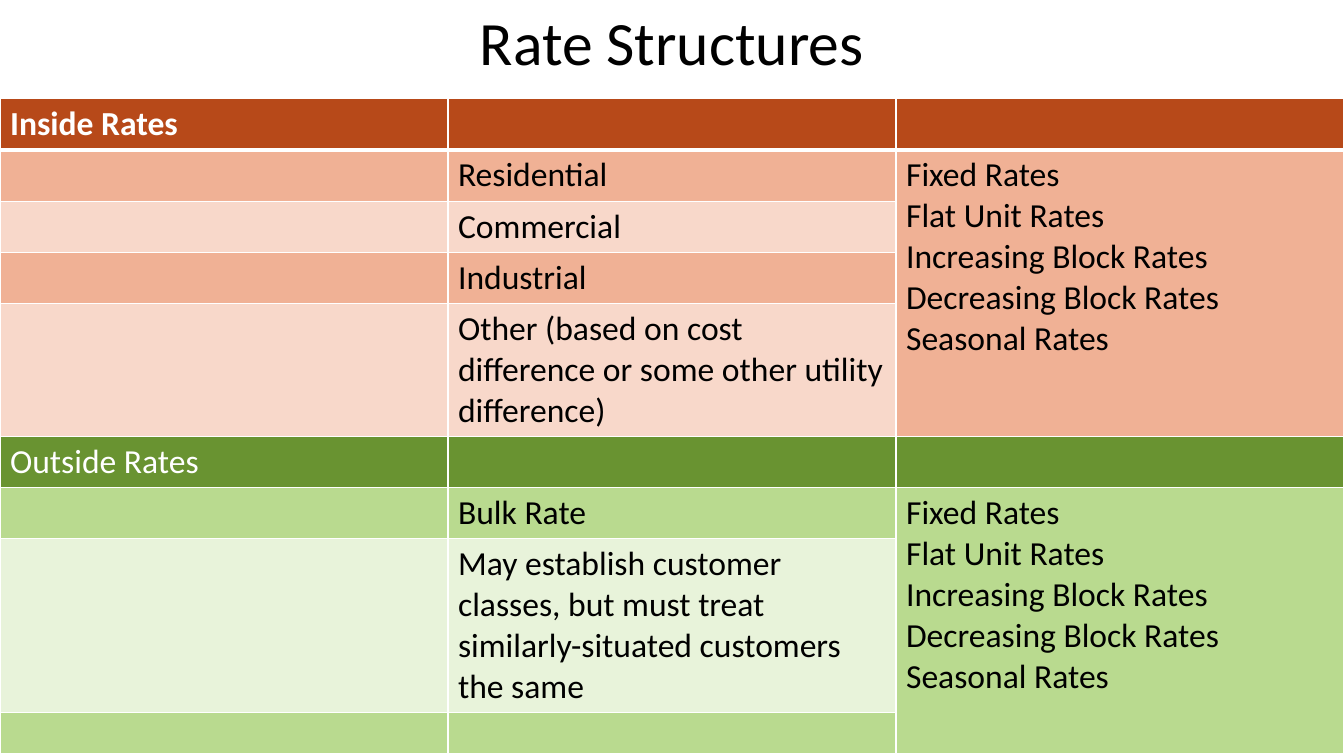
from lxml import etree
from pptx import Presentation
from pptx.dml.color import RGBColor
from pptx.enum import text
from pptx.oxml import ns
from pptx.util import Cm, Pt

RATES = "\n".join(["Fixed Rates", "Flat Unit Rates", "Increasing Block Rates",
                   "Decreasing Block Rates", "Seasonal Rates"])
LINE_H, CELL_PAD, EMPTY_H = 1.03, 0.26, 1.04

# heading, dark fill, middle fill, light fill, (customer class, lines it takes)
SECTIONS = [
    ("Inside Rates", "B74919", "F0B195", "F8D8CA",
     [("Residential", 1), ("Commercial", 1), ("Industrial", 1),
      ("Other (based on cost difference or some other utility difference)", 3)]),
    ("Outside Rates", "699331", "B9DA8F", "E8F3DA",
     [("Bulk Rate", 1),
      ("May establish customer classes, but must treat "
       "similarly-situated customers the same", 4),
      ("", 0)]),
]


def rgb(color):
    return RGBColor.from_string(color)


def format_runs(tf, size, color, bold=False):
    for p in tf.paragraphs:
        for r in p.runs:
            r.font.name = "Calibri"
            r.font.size = Pt(size)
            r.font.bold = bold
            r.font.color.rgb = rgb(color)


def set_borders(cell, top, bottom):
    """Draw white borders, 1 pt at the sides."""
    widths = {"lnL": 1, "lnR": 1, "lnT": top, "lnB": bottom}
    tc_pr = cell._tc.get_or_add_tcPr()
    for i, (tag, width) in enumerate(widths.items()):
        ln = etree.Element(ns.qn("a:" + tag), w=str(Pt(width)))
        fill = etree.SubElement(ln, ns.qn("a:solidFill"))
        etree.SubElement(fill, ns.qn("a:srgbClr"), val="FFFFFF")
        tc_pr.insert(i, ln)


def fill_cell(cell, words, fill, color, bold=False):
    cell.fill.solid()
    cell.fill.fore_color.rgb = rgb(fill)
    if words:
        cell.text_frame.text = words
        format_runs(cell.text_frame, 24, color, bold)


def add_title(slide, words, left, top, width, height):
    tf = slide.shapes.add_textbox(left, top, width, height).text_frame
    tf.word_wrap = True
    tf.vertical_anchor = text.MSO_ANCHOR.MIDDLE
    tf.text = words
    tf.paragraphs[0].alignment = text.PP_ALIGN.CENTER
    tf.paragraphs[0].line_spacing = 0.9
    format_runs(tf, 44, "000000")


def add_section(table, first, section):
    """Fill one heading row and its class rows; return the next free row."""
    heading, dark, middle, light, classes = section
    for col, words in enumerate([heading, "", ""]):
        fill_cell(table.cell(first, col), words, dark, "FFFFFF", first == 0)
    table.rows[first].height = Cm(LINE_H + CELL_PAD)

    for i, (name, lines) in enumerate(classes):
        row = first + 1 + i
        height = lines * LINE_H + CELL_PAD if lines else EMPTY_H
        table.rows[row].height = Cm(height)
        band = light if i % 2 else middle
        fill_cell(table.cell(row, 0), "", band, "000000")
        fill_cell(table.cell(row, 1), name, band, "000000")

    last = first + len(classes)
    rates = table.cell(first + 1, 2)
    rates.merge(table.cell(last, 2))
    fill_cell(rates, RATES, middle, "000000")
    return last + 1


def add_rate_table(slide, left, top, width, height):
    count = sum(1 + len(section[-1]) for section in SECTIONS)
    table = slide.shapes.add_table(count, 3, left, top, width, height).table
    for col in table.columns:
        col.width = width // 3
    row = 0
    for section in SECTIONS:
        row = add_section(table, row, section)
    for row in range(count):
        for col in range(3):
            set_borders(table.cell(row, col), 3 if row == 1 else 1,
                        3 if row == 0 else 1)


def main():
    prs = Presentation()
    prs.slide_width, prs.slide_height = Cm(33.87), Cm(19.05)
    slide = prs.slides.add_slide(prs.slide_layouts[6])
    add_title(slide, "Rate Structures", Cm(2.33), Cm(-0.69), Cm(29.21), Cm(3.68))
    add_rate_table(slide, Cm(0), Cm(2.49), prs.slide_width, Cm(16.5))
    prs.save("out.pptx")


if __name__ == "__main__":
    main()
